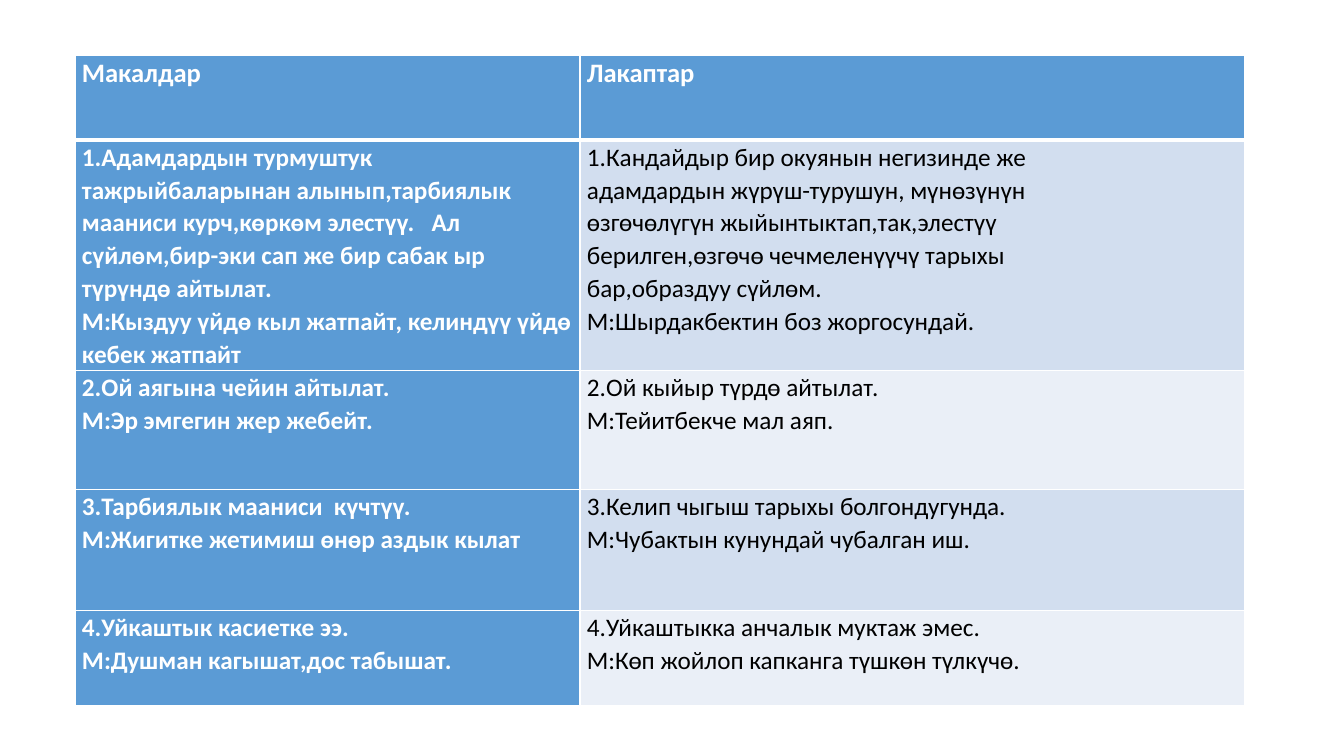
from lxml import etree
from pptx import Presentation
from pptx.dml.color import RGBColor
from pptx.enum.text import PP_ALIGN
from pptx.oxml.ns import qn
from pptx.util import Emu, Pt

LEFT, JUSTIFY = PP_ALIGN.LEFT, PP_ALIGN.JUSTIFY
EMU_PER_PX = 914400 / 100.8
SLIDE_SIZE = (1344, 756)

WHITE, BLACK, BLUE = "FFFFFF", "000000", "5B9BD5"
BANDS = ("D2DEEF", "EAEFF7")

COLUMN_WIDTHS = (505, 665)
ROW_HEIGHTS = (85, 202, 119, 121, 95)
RIGHT_INSETS = (7, 150)

COMPARISON = [
    (["Макалдар"], ["Лакаптар"]),
    (["1.Адамдардын турмуштук тажрыйбаларынан алынып,тарбиялык мааниси "
      "курч,көркөм элестүү.   Ал сүйлөм,бир-эки сап же бир сабак ыр түрүндө айтылат.",
      "М:Кыздуу үйдө кыл жатпайт, келиндүү үйдө кебек жатпайт"],
     ["1.Кандайдыр бир окуянын негизинде же адамдардын жүрүш-турушун, мүнөзүнүн "
      "өзгөчөлүгүн жыйынтыктап,так,элестүү берилген,өзгөчө чечмеленүүчү тарыхы "
      "бар,образдуу сүйлөм.",
      "М:Шырдакбектин боз жоргосундай."]),
    (["2.Ой аягына чейин айтылат.", "М:Эр эмгегин жер жебейт."],
     ["2.Ой кыйыр түрдө айтылат.", "М:Тейитбекче мал аяп."]),
    (["3.Тарбиялык мааниси  күчтүү.", "М:Жигитке жетимиш өнөр аздык кылат"],
     ["3.Келип чыгыш тарыхы болгондугунда.", "М:Чубактын кунундай чубалган иш."]),
    (["4.Уйкаштык касиетке ээ.", "М:Душман кагышат,дос табышат."],
     ["4.Уйкаштыкка анчалык муктаж эмес.", "М:Көп жойлоп капканга түшкөн түлкүчө."]),
]
JUSTIFIED = {"3.Тарбиялык мааниси  күчтүү."}


def px(length):
    return Emu(round(length * EMU_PER_PX))


def rgb(value):
    return RGBColor.from_string(value)


def apply(target, formats):
    for attribute, value in formats.items():
        setattr(target, attribute, value)


class SlideBuilder:
    def __init__(self, slide, font_name):
        self.slide = slide
        self.font_name = font_name

    def table(self, left, top, widths, heights):
        frame = self.slide.shapes.add_table(
            len(heights), len(widths), px(left), px(top), px(sum(widths)), px(sum(heights)))
        grid = frame.table
        apply(grid, {"first_row": False, "horz_banding": False})
        for column, width in zip(grid.columns, widths):
            column.width = px(width)
        for row, height in zip(grid.rows, heights):
            row.height = px(height)
        return grid

    def borders(self, cell, color, widths):
        """Draw the cell's edges; widths maps L, R, T and B, in that order, to points."""
        properties = cell._tc.get_or_add_tcPr()
        for side, width in widths.items():
            edge = etree.SubElement(properties, qn(f"a:ln{side}"), w=str(Pt(width)))
            fill = etree.SubElement(edge, qn("a:solidFill"))
            etree.SubElement(fill, qn("a:srgbClr"), val=color)

    def cell(self, cell, paragraphs, fill, right_inset, font):
        apply(cell, {"margin_left": px(7), "margin_right": px(right_inset),
                     "margin_top": 0, "margin_bottom": 0})
        cell.fill.solid()
        cell.fill.fore_color.rgb = rgb(fill)
        cell.text_frame.text = "\n".join(paragraphs)
        for paragraph in cell.text_frame.paragraphs:
            apply(paragraph, {"line_spacing": 1.07,
                              "alignment": JUSTIFY if paragraph.text in JUSTIFIED else LEFT})
            for run in paragraph.runs:
                apply(run.font, {"name": self.font_name, "size": Pt(font["size"]),
                                 "bold": font["bold"]})
                run.font.color.rgb = rgb(font["color"])


def main():
    presentation = Presentation()
    presentation.slide_width, presentation.slide_height = map(px, SLIDE_SIZE)
    slide = presentation.slides.add_slide(presentation.slide_layouts[6])
    builder = SlideBuilder(slide, "Calibri")
    comparison = builder.table(75, 55, COLUMN_WIDTHS, ROW_HEIGHTS)

    for row, entries in enumerate(COMPARISON):
        for column, paragraphs in enumerate(entries):
            heading = row == 0
            emphasized = heading or column == 0
            cell = comparison.cell(row, column)
            builder.borders(cell, WHITE, {"L": 1, "R": 1, "T": 3 if row == 1 else 1,
                                          "B": 3 if heading else 1})
            builder.cell(cell, paragraphs,
                         BLUE if emphasized else BANDS[(row - 1) % 2],
                         RIGHT_INSETS[column],
                         {"size": 19 if heading else 18, "bold": emphasized,
                          "color": WHITE if emphasized else BLACK})
    presentation.save("out.pptx")


if __name__ == "__main__":
    main()
